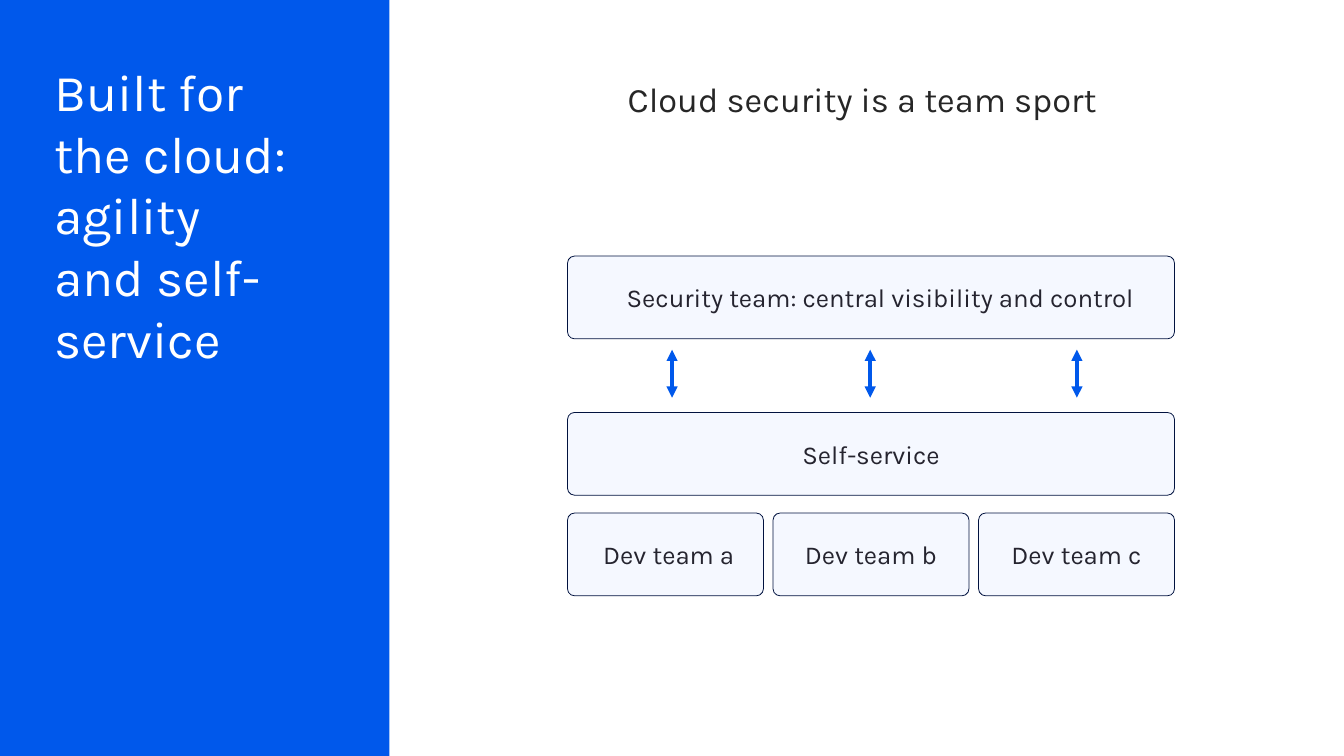
"""Build the slide on cloud security as a team sport."""
from lxml import etree
from pptx import Presentation
from pptx.dml.color import RGBColor
from pptx.enum import shapes, text
from pptx.oxml import ns
from pptx.util import Pt

BLUE = RGBColor(0x00, 0x58, 0xEB)
PALE = RGBColor(0xF5, 0xF8, 0xFF)
NAVY = RGBColor(0x01, 0x12, 0x3F)
INK = RGBColor(0x25, 0x24, 0x2F)
CHARCOAL = RGBColor(0x26, 0x26, 0x26)
WHITE = RGBColor(0xFF, 0xFF, 0xFF)

LEFT, WIDTH, HEIGHT = 527.8, 564.5, 77
TEAM_WIDTH, TEAM_STEP = 182.2, 191.15


def write(shape, words, size, color, align, anchor, inset=7.2):
    frame = shape.text_frame
    frame.text = words
    frame_format = {
        "word_wrap": True,
        "auto_size": text.MSO_AUTO_SIZE.NONE,
        "vertical_anchor": anchor,
        "margin_left": Pt(inset),
        "margin_right": Pt(7.2),
        "margin_top": Pt(3.6),
        "margin_bottom": Pt(3.6),
    }
    for name, value in frame_format.items():
        setattr(frame, name, value)
    paragraph = frame.paragraphs[0]
    paragraph.alignment = align
    for name, value in {"name": "Karla", "size": Pt(size)}.items():
        setattr(paragraph.font, name, value)
    paragraph.font.color.rgb = color


def add_block(kind, left, top, width, height, fill):
    block = slide.shapes.add_shape(kind, Pt(left), Pt(top), Pt(width), Pt(height))
    block.shadow.inherit = False
    block.fill.solid()
    block.fill.fore_color.rgb = fill
    block.line.fill.background()
    return block


deck = Presentation()
deck.slide_width, deck.slide_height = Pt(1249.92), Pt(703.44)
slide = deck.slides.add_slide(deck.slide_layouts[5])

title = slide.shapes.title
title_place = {"left": 43.2, "top": 51.8, "width": 241.2, "height": 299.5}
for name, value in title_place.items():
    setattr(title, name, Pt(value))
write(title, "Built for the cloud: agility and self-service", 48, WHITE,
      text.PP_ALIGN.LEFT, text.MSO_ANCHOR.TOP)

panel = add_block(shapes.MSO_SHAPE.RECTANGLE, 0, 0, 362.2, 703.44, BLUE)
title.element.addprevious(panel.element)

headline = slide.shapes.add_textbox(Pt(576.7), Pt(69.1), Pt(WIDTH), Pt(46.1))
write(headline, "Cloud security is a team sport", 32, CHARCOAL,
      text.PP_ALIGN.LEFT, text.MSO_ANCHOR.TOP)

layers = [
    ("Security team: central visibility and control", LEFT, 238.3, WIDTH, 24),
    ("Self-service", LEFT, 383.8, WIDTH, 7.2),
]
for column, (letter, inset) in enumerate([("a", 13.2), ("b", 7.2), ("c", 7.2)]):
    layers.append((f"Dev team {letter}", LEFT + column * TEAM_STEP, 477.4,
                   TEAM_WIDTH, inset))

for label, left, top, width, inset in layers:
    layer = add_block(shapes.MSO_SHAPE.ROUNDED_RECTANGLE, left, top, width, HEIGHT, PALE)
    layer.adjustments[0] = 0.085
    layer.line.color.rgb = NAVY
    layer.line.width = Pt(0.75)
    write(layer, label, 24, INK, text.PP_ALIGN.CENTER, text.MSO_ANCHOR.MIDDLE, inset)

for x in (625, 809.3, 1001.5):
    exchange = slide.shapes.add_connector(
        shapes.MSO_CONNECTOR.STRAIGHT, Pt(x), Pt(325.4), Pt(x), Pt(370.1))
    exchange.line.color.rgb = BLUE
    exchange.line.width = Pt(3.5)
    outline = exchange.line._get_or_add_ln()
    for end in ("a:headEnd", "a:tailEnd"):
        etree.SubElement(outline, ns.qn(end), type="triangle")
    etree.SubElement(exchange.element.spPr, ns.qn("a:effectLst"))

deck.save("out.pptx")
